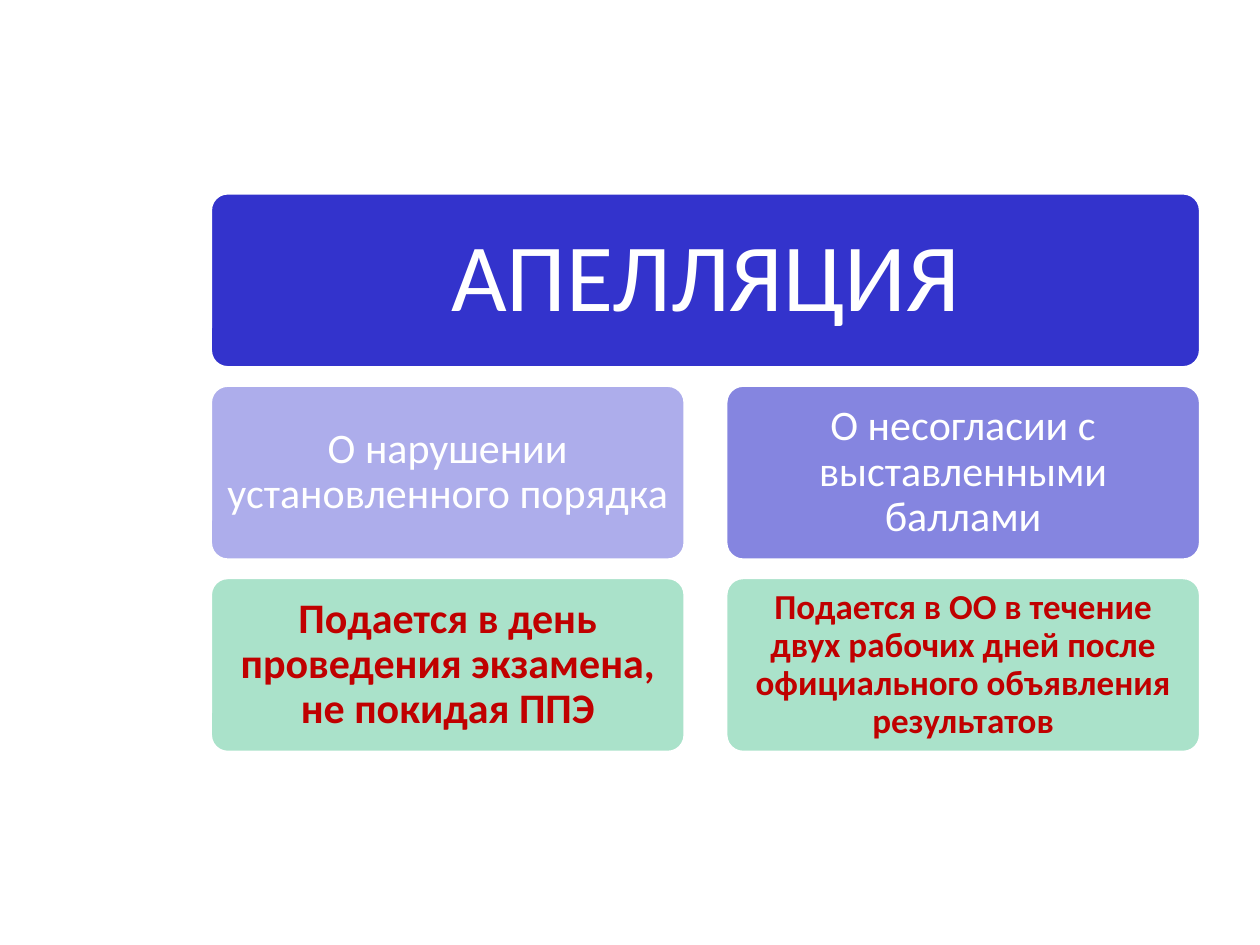
from pptx import Presentation
from pptx.dml.color import RGBColor
from pptx.enum.shapes import MSO_SHAPE
from pptx.enum.text import MSO_ANCHOR, MSO_AUTO_SIZE, PP_ALIGN
from pptx.util import Pt

ROUNDED = MSO_SHAPE.ROUNDED_RECTANGLE
MIDDLE = MSO_ANCHOR.MIDDLE
NO_FIT = MSO_AUTO_SIZE.NONE
CENTER = PP_ALIGN.CENTER

WHITE = RGBColor(0xFF, 0xFF, 0xFF)
INDIGO = RGBColor(0x33, 0x33, 0xCC)
LAVENDER = RGBColor(0xAD, 0xAD, 0xEB)
VIOLET = RGBColor(0x85, 0x85, 0xE0)
MINT = RGBColor(0xAA, 0xE2, 0xCA)
RED = RGBColor(0xC0, 0x00, 0x00)

LEFT, TOP = 120.2, 110.2
CARD_WIDTH, CARD_HEIGHT = 271.4, 100
COLUMN_STEP, ROW_STEP = 294.5, 109.9

GROUNDS = [
    ("О нарушении установленного порядка", LAVENDER,
     "Подается в день проведения экзамена, не покидая ППЭ", 24, 4.3),
    ("О несогласии с выставленными баллами", VIOLET,
     "Подается в ОО в течение двух рабочих дней после официального "
     "объявления результатов", 20, 2.9),
]


def apply_format(target, values):
    """Set every attribute in values on the target."""
    for name, value in values.items():
        setattr(target, name, value)


def write_text(holder, text, size, color, bold, margin):
    """Write one centred paragraph into a shape or placeholder."""
    frame = holder.text_frame
    sides = ("left", "top", "right", "bottom")
    apply_format(frame, {"text": text, "word_wrap": True, "auto_size": NO_FIT,
                         "vertical_anchor": MIDDLE})
    apply_format(frame, {f"margin_{side}": Pt(margin) for side in sides})
    paragraph = frame.paragraphs[0]
    apply_format(paragraph, {"alignment": CENTER, "line_spacing": 0.9})
    font = paragraph.runs[0].font
    apply_format(font, {"name": "Calibri", "size": Pt(size), "bold": bold})
    font.color.rgb = color


def add_card(slide, column, row, fill, width=CARD_WIDTH):
    """Add a rounded card at a grid position."""
    card = slide.shapes.add_shape(
        ROUNDED, Pt(LEFT + column * COLUMN_STEP), Pt(TOP + row * ROW_STEP),
        Pt(width), Pt(CARD_HEIGHT))
    card.adjustments[0] = 0.1
    card.shadow.inherit = False
    card.fill.solid()
    card.fill.fore_color.rgb = fill
    card.line.color.rgb = WHITE
    card.line.width = Pt(2)
    return card


def add_heading(slide, text):
    """Lay the slide title over a card that spans both columns."""
    banner = add_card(slide, 0, 0, INDIGO, COLUMN_STEP + CARD_WIDTH)
    title = slide.shapes.title
    apply_format(title, {side: getattr(banner, side)
                         for side in ("left", "top", "width", "height")})
    write_text(title, text, 55, WHITE, False, 16.5)
    banner._element.addnext(title._element)


def main():
    """Build the slide about kinds of appeal."""
    deck = Presentation()
    apply_format(deck, {"slide_width": Pt(720), "slide_height": Pt(540)})
    slide = deck.slides.add_slide(deck.slide_layouts[5])
    add_heading(slide, "АПЕЛЛЯЦИЯ")
    for column, (ground, fill, deadline, size, margin) in enumerate(GROUNDS):
        ground_card = add_card(slide, column, 1, fill)
        write_text(ground_card, ground, 24, WHITE, False, 4.3)
        deadline_card = add_card(slide, column, 2, MINT)
        write_text(deadline_card, deadline, size, RED, True, margin)
    deck.save("out.pptx")


if __name__ == "__main__":
    main()
